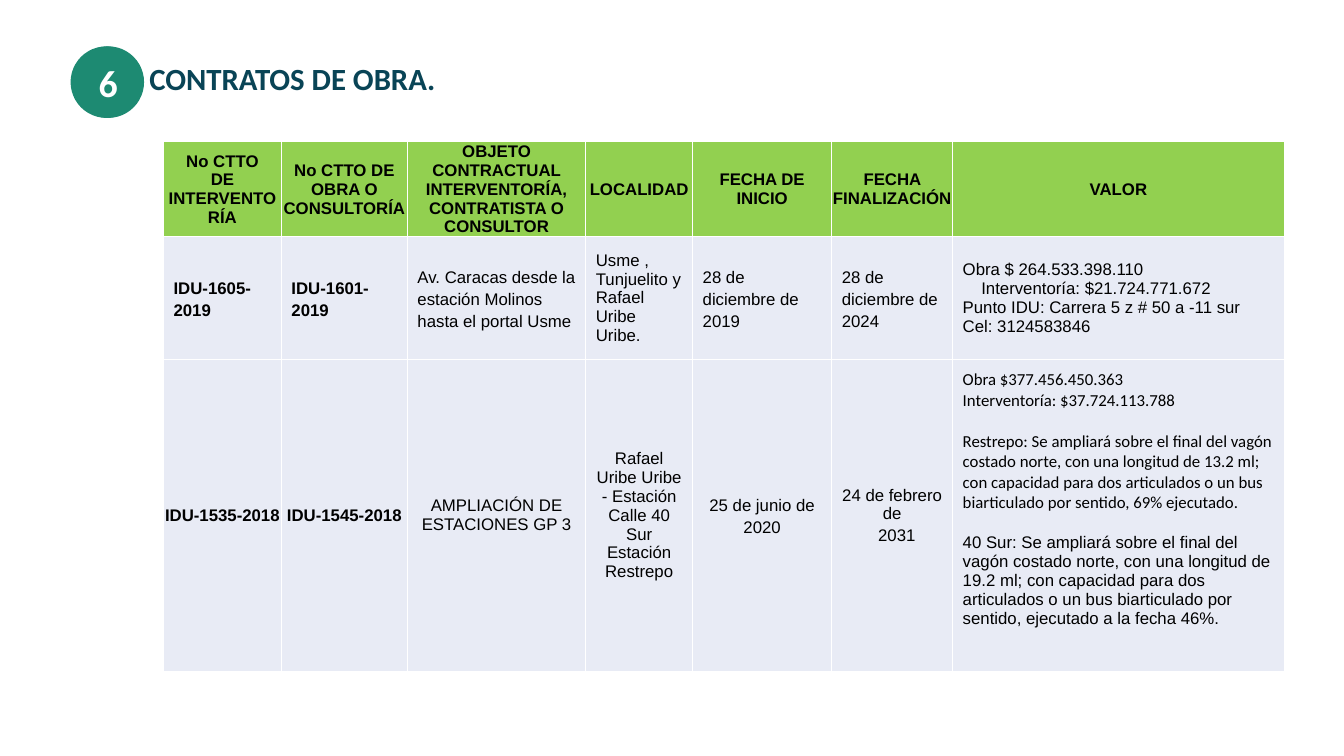
"""Builds the slide that lists the works contracts."""
from dataclasses import dataclass

import pptx
import pptx.dml.color
import pptx.enum.shapes
import pptx.enum.text
import pptx.oxml
import pptx.oxml.ns
import pptx.presentation
import pptx.slide
import pptx.table
import pptx.text.text
import pptx.util

Pt = pptx.util.Pt
RGBColor = pptx.dml.color.RGBColor
Align = pptx.enum.text.PP_ALIGN
Anchor = pptx.enum.text.MSO_ANCHOR

GREEN = RGBColor(0x1D, 0x8A, 0x72)
NAVY = RGBColor(0x09, 0x44, 0x56)
LIME = RGBColor(0x92, 0xD0, 0x50)
LAVENDER = RGBColor(0xE8, 0xEB, 0xF5)
WHITE = RGBColor(0xFF, 0xFF, 0xFF)
BLACK = RGBColor(0x00, 0x00, 0x00)

COLUMN_WIDTHS = [84.24, 90, 127.44, 76.32, 99.36, 86.4, 236.88]
ROW_HEIGHTS = [52, 88, 222.5]


@dataclass(frozen=True)
class Line:
    text: str
    font: str = "Arial"
    spacing: float = 1.0
    indent: float = 0
    before: float = 0


@dataclass(frozen=True)
class Entry:
    lines: list[Line]
    bold: bool = False
    align: Align = Align.LEFT
    fill: RGBColor = LAVENDER
    tight: bool = False
    anchor: Anchor = Anchor.MIDDLE


def heading(*texts: str) -> Entry:
    return Entry([Line(text) for text in texts], True, Align.CENTER, LIME, True)


def contract(number: str) -> Entry:
    return Entry([Line(number)], True, Align.CENTER, tight=True)


def spaced(text: str, bold: bool = False, align: Align = Align.LEFT) -> Entry:
    return Entry([Line(text, spacing=1.15)], bold, align)


def centred(*lines: Line) -> Entry:
    return Entry(list(lines), align=Align.CENTER)


CONTRACTS = [
    [
        heading("No CTTO", "DE INTERVENTORÍA"),
        heading("No CTTO DE", "OBRA O CONSULTORÍA"),
        heading("OBJETO CONTRACTUAL INTERVENTORÍA, CONTRATISTA O CONSULTOR"),
        heading("LOCALIDAD"),
        heading("FECHA DE INICIO"),
        heading("FECHA FINALIZACIÓN"),
        heading("VALOR"),
    ],
    [
        spaced("IDU-1605-2019", bold=True),
        spaced("IDU-1601-2019", bold=True),
        spaced("Av. Caracas desde la estación Molinos hasta el portal Usme"),
        Entry([Line("Usme , Tunjuelito y Rafael Uribe Uribe.")]),
        spaced("28 de diciembre de 2019"),
        spaced("28 de diciembre de 2024"),
        Entry([
            Line("Obra $ 264.533.398.110"),
            Line("Interventoría: $21.724.771.672", indent=13.3),
            Line("Punto IDU: Carrera 5 z # 50 a -11 sur"),
            Line("Cel: 3124583846"),
        ]),
    ],
    [
        contract("IDU-1535-2018"),
        contract("IDU-1545-2018"),
        centred(Line("AMPLIACIÓN DE ESTACIONES GP 3")),
        centred(Line("Rafael Uribe Uribe"), Line("- Estación Calle 40 Sur"),
                Line("Estación Restrepo")),
        spaced("25 de junio de 2020", align=Align.CENTER),
        centred(Line("24 de febrero de"), Line("2031", spacing=1.15, indent=6.7)),
        Entry([
            Line("Obra $377.456.450.363", "Calibri"),
            Line("Interventoría: $37.724.113.788", "Calibri"),
            Line("Restrepo: Se ampliará sobre el final del vagón costado norte, "
                 "con una longitud de 13.2 ml; con capacidad para dos articulados "
                 "o un bus biarticulado por sentido, 69% ejecutado.",
                 "Calibri", before=14.6),
            Line("40 Sur: Se ampliará sobre el final del vagón costado norte, "
                 "con una longitud de 19.2 ml; con capacidad para dos articulados "
                 "o un bus biarticulado por sentido, ejecutado a la fecha 46%.",
                 before=14.6),
        ], anchor=Anchor.TOP),
    ],
]


def style_font(font: pptx.text.text.Font, name: str, size: float,
               color: RGBColor, bold: bool) -> None:
    font.name = name
    font.size = Pt(size)
    font.bold = bold
    font.color.rgb = color


def set_frame(frame: pptx.text.text.TextFrame) -> None:
    frame.margin_left = frame.margin_right = Pt(3.6)
    frame.margin_top = frame.margin_bottom = Pt(1.44)
    frame.vertical_anchor = Anchor.MIDDLE
    frame.word_wrap = True
    frame.auto_size = pptx.enum.text.MSO_AUTO_SIZE.NONE


def add_badge(slide: pptx.slide.Slide, left: float, number: str = "") -> None:
    badge = slide.shapes.add_shape(
        pptx.enum.shapes.MSO_SHAPE.OVAL, Pt(left), Pt(33.1), Pt(51.1), Pt(51.1))
    badge.shadow.inherit = False
    badge.fill.solid()
    badge.fill.fore_color.rgb = GREEN
    badge.line.fill.background()
    if number:
        set_frame(badge.text_frame)
        badge.text_frame.text = number
        paragraph = badge.text_frame.paragraphs[0]
        paragraph.alignment = Align.CENTER
        style_font(paragraph.runs[0].font, "Calibri", 27, WHITE, True)


def set_heading(slide: pptx.slide.Slide, text: str) -> None:
    title = slide.shapes.title
    title.left, title.top, title.width, title.height = (
        Pt(103), Pt(33.1), Pt(673.2), Pt(49))
    set_frame(title.text_frame)
    title.text_frame.text = text
    paragraph = title.text_frame.paragraphs[0]
    paragraph.alignment = Align.LEFT
    paragraph.line_spacing = 0.9
    style_font(paragraph.runs[0].font, "Calibri", 22, NAVY, True)


def fill_cell(cell: pptx.table._Cell, entry: Entry) -> None:
    properties = cell._tc.get_or_add_tcPr()
    for side in ("lnL", "lnR", "lnT", "lnB"):
        properties.append(pptx.oxml.parse_xml(
            f'<a:{side} {pptx.oxml.ns.nsdecls("a")} w="{Pt(1)}"><a:solidFill>'
            f'<a:srgbClr val="{WHITE}"/></a:solidFill></a:{side}>'))
    cell.fill.solid()
    cell.fill.fore_color.rgb = entry.fill
    margin = Pt(0.72 if entry.tight else 7.2)
    cell.margin_left = cell.margin_right = cell.margin_top = margin
    cell.margin_bottom = Pt(0) if entry.tight else margin
    cell.vertical_anchor = entry.anchor
    cell.text_frame.text = "\n".join(line.text for line in entry.lines)
    for paragraph, line in zip(cell.text_frame.paragraphs, entry.lines):
        paragraph.alignment = entry.align
        paragraph.line_spacing = line.spacing
        if line.before:
            paragraph.space_before = Pt(line.before)
        if line.indent:
            paragraph._p.get_or_add_pPr().set("marL", str(Pt(line.indent)))
        style_font(paragraph.runs[0].font, line.font, 12, BLACK, entry.bold)


def add_contracts(slide: pptx.slide.Slide) -> None:
    table = slide.shapes.add_table(
        len(ROW_HEIGHTS), len(COLUMN_WIDTHS), Pt(116.8), Pt(101),
        Pt(sum(COLUMN_WIDTHS)), Pt(sum(ROW_HEIGHTS))).table
    table.first_row = table.horz_banding = False
    for column, width in zip(table.columns, COLUMN_WIDTHS):
        column.width = Pt(width)
    for row, height, entries in zip(table.rows, ROW_HEIGHTS, CONTRACTS):
        row.height = Pt(height)
        for cell, entry in zip(row.cells, entries):
            fill_cell(cell, entry)


def main() -> None:
    deck = pptx.Presentation()
    deck.slide_width, deck.slide_height = Pt(960), Pt(540)
    slide = deck.slides.add_slide(deck.slide_layouts[5])
    add_badge(slide, 50.4)
    add_badge(slide, 51.8, "6")
    set_heading(slide, "CONTRATOS DE OBRA.")
    add_contracts(slide)
    deck.save("out.pptx")


if __name__ == "__main__":
    main()
